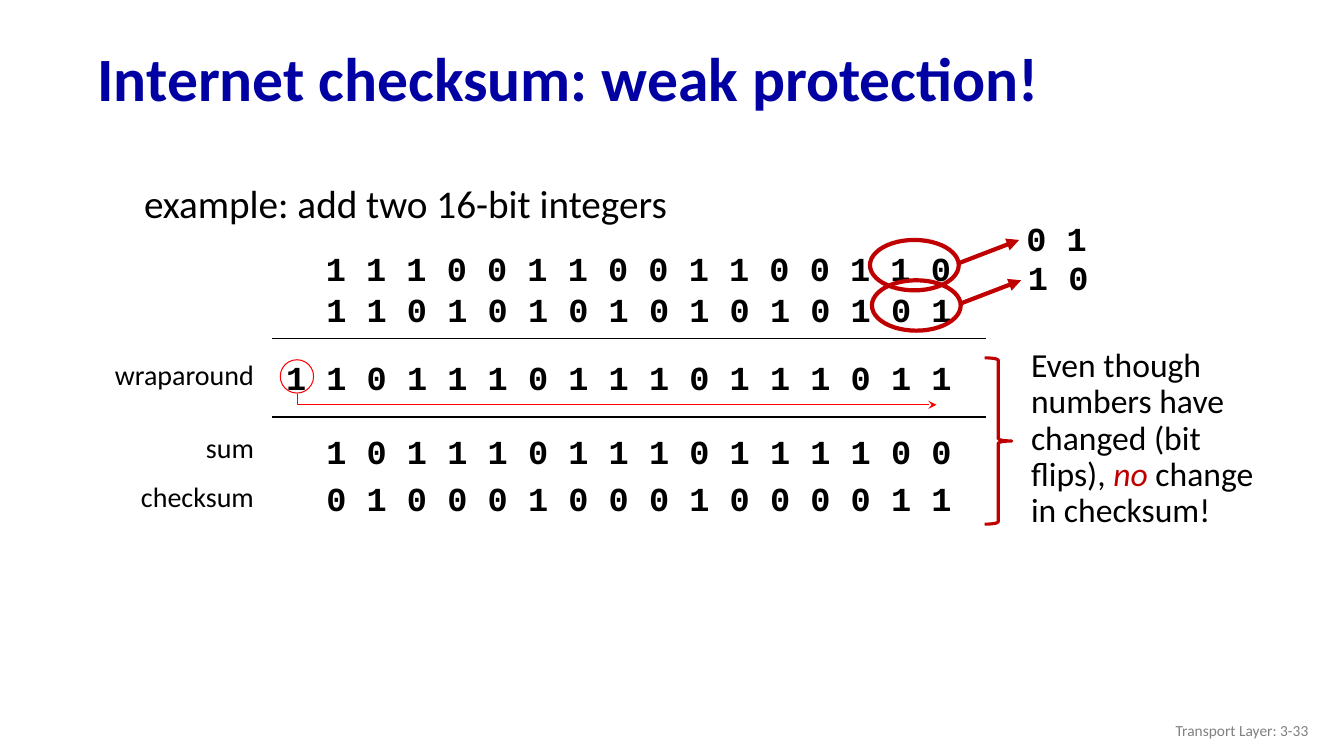
"""Build the slide on the weak protection of the Internet checksum."""
from lxml.etree import SubElement
from pptx import Presentation
from pptx.dml.color import RGBColor
from pptx.enum.shapes import MSO_CONNECTOR as CONN, MSO_SHAPE as SHAPE
from pptx.enum.text import MSO_ANCHOR as ANCHOR, PP_ALIGN as ALIGN
from pptx.oxml.ns import qn
from pptx.util import Pt

COLORS = {"title": "0000A3", "text": "000000", "carry": "FF0000",
          "accent": "C00000", "footer": "808080"}

prs = Presentation()
prs.slide_width, prs.slide_height = Pt(960), Pt(540)
slide = prs.slides.add_slide(prs.slide_layouts[6])
shapes = slide.shapes


def add_text(x, y, w, h, runs, size, font="Calibri", bold=False,
             align=ALIGN.LEFT, anchor=ANCHOR.TOP, spacing=1.0):
    tf = shapes.add_textbox(Pt(x), Pt(y), Pt(w), Pt(h)).text_frame
    tf.word_wrap, tf.vertical_anchor = True, anchor
    p = tf.paragraphs[0]
    p.alignment, p.line_spacing = align, spacing
    for text, color, italic in runs:
        r = p.add_run()
        r.text = text
        r.font.name, r.font.size = font, Pt(size)
        r.font.bold, r.font.italic = bold, italic
        r.font.color.rgb = RGBColor.from_string(COLORS[color])


def style_line(sp, color, width, arrow=None):
    sp.line.color.rgb = RGBColor.from_string(COLORS[color])
    sp.line.width = Pt(width)
    if arrow:
        SubElement(sp.line._get_or_add_ln(), qn("a:tailEnd"), type=arrow)
    if hasattr(sp, "fill"):
        sp.fill.background()
        sp.shadow.inherit = False
    else:
        SubElement(sp._element.spPr, qn("a:effectLst"))


add_text(62.6, 23, 874, 70.6, [("Internet checksum: weak protection!", "title", False)],
         44, bold=True, anchor=ANCHOR.MIDDLE, spacing=0.9)
add_text(95.8, 114.5, 612, 60, [("example: add two 16-bit integers", "text", False)],
         28, spacing=1.3)

bit_rows = [
    (225.6, 173.5, "1 1 1 0 0 1 1 0 0 1 1 0 0 1 1 0"),
    (226, 203, "1 1 0 1 0 1 0 1 0 1 0 1 0 1 0 1"),
    (197.2, 251.3, "1 1 0 1 1 1 0 1 1 1 0 1 1 1 0 1 1"),
    (226, 304.6, "1 0 1 1 1 0 1 1 1 0 1 1 1 1 0 0"),
    (226, 337.7, "0 1 0 0 0 1 0 0 0 1 0 0 0 0 1 1"),
    (726, 152, "0 1"),
    (727.2, 180, "1 0"),
]
for x, y, bits in bit_rows:
    add_text(x, y, 14.4 * len(bits) + 18, 36, [(bits, "text", False)],
             24, font="Courier New", bold=True)

for y, label in [(252, "wraparound"), (304, "sum"), (338.7, "checksum")]:
    add_text(68, y, 120.5, 31.5, [(label, "text", False)], 20, align=ALIGN.RIGHT)

for y in (242, 298):
    rule = shapes.add_connector(CONN.STRAIGHT, Pt(194.4), Pt(y), Pt(704.2), Pt(y))
    style_line(rule, "text", 1)

carry_ring = shapes.add_shape(SHAPE.OVAL, Pt(200.2), Pt(257), Pt(23.8), Pt(23.8))
style_line(carry_ring, "carry", 0.75)
builder = shapes.build_freeform(Pt(212.4), Pt(281.6))
builder.add_line_segments([(Pt(212.4), Pt(289.2)), (Pt(669), Pt(289.2))], close=False)
style_line(builder.convert_to_shape(), "carry", 0.75, "stealth")

for x, y in [(621.4, 171.4), (622.8, 200.2)]:
    flip_ring = shapes.add_shape(SHAPE.OVAL, Pt(x), Pt(y), Pt(63.4), Pt(36))
    style_line(flip_ring, "accent", 3)
    arrow = shapes.add_connector(CONN.STRAIGHT, Pt(x + 63.4), Pt(y + 16.6),
                                 Pt(x + 106.6), Pt(y))
    style_line(arrow, "accent", 3, "triangle")

brace = shapes.add_shape(SHAPE.RIGHT_BRACE, Pt(703.4), Pt(255.6), Pt(19.4), Pt(118.8))
style_line(brace, "accent", 2.25)
add_text(729.4, 245.5, 189.4, 138.2,
         [("Even though numbers have changed (bit flips), ", "text", False),
          ("no", "accent", True), (" change in checksum!", "text", False)],
         24, spacing=0.9)
add_text(725.8, 507.6, 216, 28.8, [("Transport Layer: 3-33", "footer", False)],
         11, align=ALIGN.RIGHT, anchor=ANCHOR.MIDDLE)

prs.save("out.pptx")
